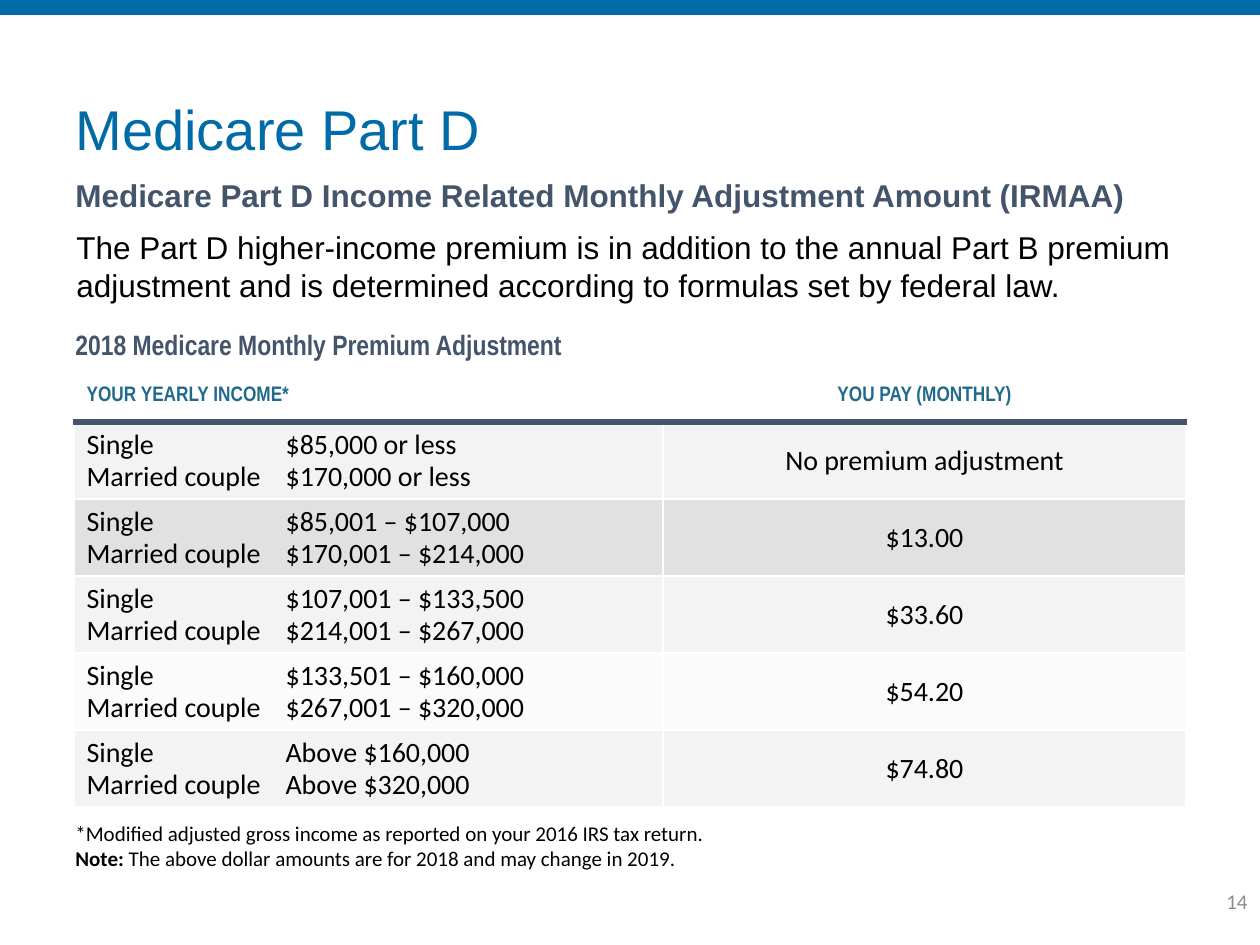
import dataclasses

import pptx
import pptx.dml.color
import pptx.enum.shapes
import pptx.enum.text
import pptx.oxml
import pptx.oxml.ns
import pptx.util

ALIGN = pptx.enum.text.PP_ALIGN
ANCHOR = pptx.enum.text.MSO_ANCHOR
NS = pptx.oxml.ns.nsdecls("a")


@dataclasses.dataclass(frozen=True)
class Theme:
    """Colours, fonts and type sizes of the slide."""
    blue: str = "006BA6"
    slate: str = "44546A"
    teal: str = "216A8B"
    black: str = "000000"
    grey: str = "8C8C8C"
    white: str = "FFFFFF"
    bands: tuple = ("D9D9D9", "9D9D9D", "D9D9D9", "F2F2F2", "D9D9D9")
    band_alpha: int = 30
    sans: str = "Arial"
    narrow: str = "Arial Narrow"
    body: str = "Calibri"
    title_size: int = 32
    lead_size: int = 18
    cell_size: int = 16
    small_size: int = 12


T = Theme()

PREMIUMS = [
    ("$85,000 or less", "$170,000 or less", "No premium adjustment"),
    ("$85,001 – $107,000", "$170,001 – $214,000", "$13.00"),
    ("$107,001 – $133,500", "$214,001 – $267,000", "$33.60"),
    ("$133,501 – $160,000", "$267,001 – $320,000", "$54.20"),
    ("Above $160,000", "Above $320,000", "$74.80"),
]


def px(n):
    """Turn pixels into EMU at 126 to the inch."""
    return pptx.util.Emu(round(n * 914400 / 126))


def rgb(color):
    """Turn a hex string into a colour."""
    return pptx.dml.color.RGBColor.from_string(color)


def write(p, text, *, size, font, color, bold=False, align=ALIGN.LEFT, spacing=1.0):
    """Add text to a paragraph, breaking lines at each newline."""
    p.alignment = align
    p.line_spacing = spacing
    for i, line in enumerate(text.split("\n")):
        if i:
            p.add_line_break()
        r = p.add_run()
        r.text = line
        r.font.size = pptx.util.Pt(size)
        r.font.name = font
        r.font.bold = bold
        r.font.color.rgb = rgb(color)


def text_box(s, box, anchor=ANCHOR.TOP):
    """Add an empty wrapping text box and return its frame."""
    tf = s.shapes.add_textbox(*map(px, box)).text_frame
    tf.word_wrap = True
    tf.vertical_anchor = anchor
    return tf


def add_heading(s, box):
    """Place the top bar, title, subtitle and lead paragraph."""
    x, y, w, h = box
    bar = s.shapes.add_shape(pptx.enum.shapes.MSO_SHAPE.RECTANGLE,
                             0, 0, px(1260), px(15))
    bar.shadow.inherit = False
    bar.fill.solid()
    bar.fill.fore_color.rgb = rgb(T.blue)
    bar.line.fill.background()

    title = s.shapes.title
    title.left, title.top, title.width, title.height = map(px, (x, y, w, 79))
    tf = title.text_frame
    tf.vertical_anchor = ANCHOR.MIDDLE
    write(tf.paragraphs[0], "Medicare Part D", size=T.title_size,
          font=T.sans, color=T.blue, spacing=0.9)

    tf = text_box(s, (x, y + 77, w, 50))
    write(tf.paragraphs[0],
          "Medicare Part D Income Related Monthly Adjustment Amount (IRMAA)",
          size=T.lead_size, font=T.sans, color=T.slate, bold=True)
    tf = text_box(s, (x + 1, y + 129, w, h - 129))
    write(tf.paragraphs[0],
          "The Part D higher-income premium is in addition to the annual Part B "
          "premium adjustment and is determined according to formulas set by "
          "federal law.", size=T.lead_size, font=T.sans, color=T.black)


def border(cell, sides, color, width):
    """Draw borders on the named sides of a cell, ahead of its fill."""
    tc_pr = cell._tc.get_or_add_tcPr()
    for i, side in enumerate(sides):
        ln = pptx.oxml.parse_xml(
            f'<a:{side} {NS} w="{pptx.util.Pt(width)}"><a:solidFill>'
            f'<a:srgbClr val="{color}"/></a:solidFill></a:{side}>')
        tc_pr.insert(i, ln)


def fill_cell(cell, color):
    """Give a cell a translucent fill."""
    cell.fill.solid()
    cell.fill.fore_color.rgb = rgb(color)
    clr = cell._tc.tcPr.find(".//" + pptx.oxml.ns.qn("a:srgbClr"))
    clr.append(pptx.oxml.parse_xml(f'<a:alpha {NS} val="{T.band_alpha * 1000}"/>'))


def add_tab(p, pos):
    """Add a left tab stop to a paragraph."""
    p._p.get_or_add_pPr().append(pptx.oxml.parse_xml(
        f'<a:tabLst {NS}><a:tab pos="{px(pos)}" algn="l"/></a:tabLst>'))


def add_premiums(s, box):
    """Place the table caption and the premium table."""
    x, y, w, h = box
    tf = text_box(s, (x - 11, y, 701, 44))
    write(tf.paragraphs[0], "2018 Medicare Monthly Premium Adjustment",
          size=T.cell_size, font=T.narrow, color=T.slate, bold=True, spacing=0.9)

    caption, head = 44, 53
    rows = len(PREMIUMS) + 1
    tbl = s.shapes.add_table(rows, 2, px(x), px(y + caption), px(w),
                             px(h - caption)).table
    tbl.first_row = tbl.horz_banding = False
    tbl.columns[0].width, tbl.columns[1].width = px(589), px(w - 589)
    for i, row in enumerate(tbl.rows):
        row.height = px((h - caption - head) // (rows - 1) if i else head)

    heads = ("YOUR YEARLY INCOME*", "YOU PAY (MONTHLY)")
    for cell, text, align in zip(tbl.rows[0].cells, heads, (ALIGN.LEFT, ALIGN.CENTER)):
        cell.vertical_anchor = ANCHOR.MIDDLE
        cell.fill.background()
        border(cell, ("lnT",), T.white, 1)
        border(cell, ("lnB",), T.slate, 4.5)
        write(cell.text_frame.paragraphs[0], text, size=T.small_size, font=T.narrow,
              color=T.teal, bold=True, align=align, spacing=0.95)

    for i, (single, couple, pay) in enumerate(PREMIUMS):
        income = f"Single\t{single}\nMarried couple\t{couple}"
        left, right = tbl.rows[i + 1].cells
        add_tab(left.text_frame.paragraphs[0], 199)
        for cell, text, align in ((left, income, ALIGN.LEFT), (right, pay, ALIGN.CENTER)):
            cell.vertical_anchor = ANCHOR.MIDDLE
            fill_cell(cell, T.bands[i])
            border(cell, ("lnB",), T.white, 1)
            border(cell, ("lnT",), *((T.white, 1) if i else (T.slate, 4.5)))
            write(cell.text_frame.paragraphs[0], text, size=T.cell_size, font=T.body,
                  color=T.black, align=align, spacing=0.95)


def add_footer(s, box):
    """Place the footnotes and the page number."""
    x, y, w, h = box
    tf = text_box(s, (x, y, w, 63), ANCHOR.BOTTOM)
    note = dict(size=T.small_size, font=T.body, color=T.black)
    write(tf.paragraphs[0],
          "*Modified adjusted gross income as reported on your 2016 IRS tax return.",
          **note)
    p = tf.add_paragraph()
    write(p, "Note: ", bold=True, **note)
    write(p, "The above dollar amounts are for 2018 and may change in 2019.", **note)

    tf = text_box(s, (976, y + h - 50, 284, 50), ANCHOR.MIDDLE)
    write(tf.paragraphs[0], "14", size=T.small_size, font=T.body,
          color=T.grey, align=ALIGN.RIGHT)


def main():
    """Build the slide and save it."""
    prs = pptx.Presentation()
    prs.slide_width, prs.slide_height = px(1260), px(945)
    s = prs.slides.add_slide(prs.slide_layouts[5])
    add_heading(s, (63, 93, 1134, 218))
    add_premiums(s, (74, 325, 1112, 484))
    add_footer(s, (63, 814, 1125, 112))
    prs.save("out.pptx")


if __name__ == "__main__":
    main()
